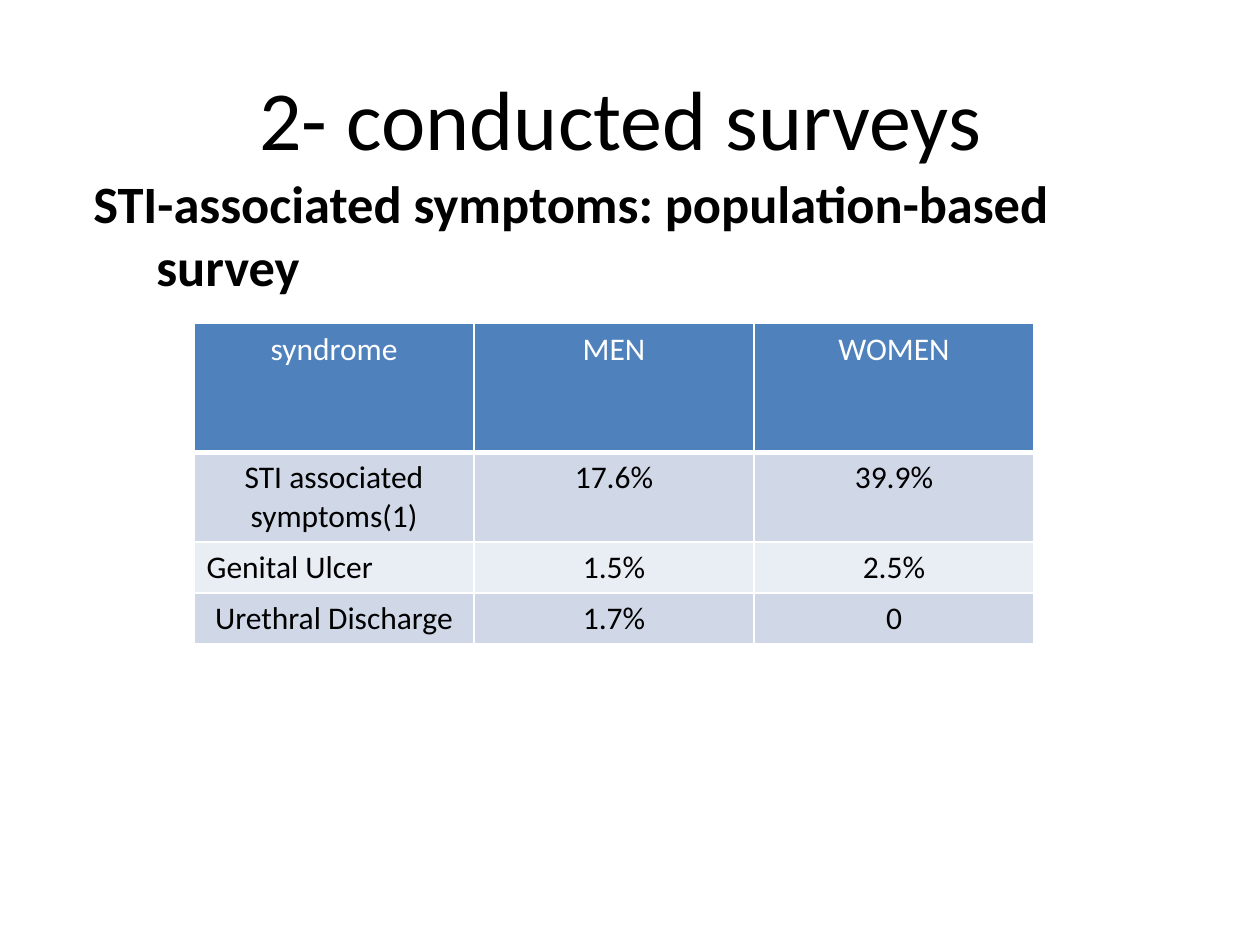
from lxml import etree
from pptx import Presentation
from pptx.dml.color import RGBColor
from pptx.enum import text
from pptx.oxml import ns
from pptx.util import Pt

COLORS = {
    "text": "000000",
    "white": "FFFFFF",
    "header": "4F81BD",
    "band_dark": "D0D8E8",
    "band_light": "E9EDF4",
}
CENTER, LEFT = text.PP_ALIGN.CENTER, text.PP_ALIGN.LEFT


def write(frame, words, size, color="text", bold=False, align=LEFT):
    """Fill a text frame with one formatted paragraph and return it."""
    para = frame.paragraphs[0]
    para.alignment = align
    span = para.add_run()
    span.text = words
    span.font.name = "Calibri"
    span.font.size = Pt(size)
    span.font.bold = bold
    span.font.color.rgb = RGBColor.from_string(COLORS[color])
    return para


def add_border(cell, side, width):
    line = etree.SubElement(cell._tc.get_or_add_tcPr(), ns.qn(f"a:ln{side}"), w=str(Pt(width)))
    fill = etree.SubElement(line, ns.qn("a:solidFill"))
    etree.SubElement(fill, ns.qn("a:srgbClr"), val=COLORS["white"])


deck = Presentation()
deck.slide_width, deck.slide_height = Pt(720), Pt(540)
page = deck.slides.add_slide(deck.slide_layouts[1])

# Title and subtitle
title = page.shapes.title
title.left, title.top, title.width, title.height = Pt(36), Pt(21.6), Pt(648), Pt(90)
title.text_frame.vertical_anchor = text.MSO_ANCHOR.MIDDLE
write(title.text_frame, "2- conducted surveys ", 48, align=CENTER)

body = page.placeholders[1]
body.left, body.top, body.width, body.height = Pt(42.5), Pt(94.3), Pt(640.8), Pt(380.2)
para = write(body.text_frame, "STI-associated symptoms: population-based survey", 30, bold=True)
para.space_before = Pt(6)
props = para._p.get_or_add_pPr()
props.set("marL", str(Pt(39.6)))
props.set("indent", str(Pt(-36)))
etree.SubElement(props, ns.qn("a:buNone"))

# Survey table
rows = [
    ("syndrome", "MEN", "WOMEN"),
    ("STI associated symptoms(1)", "17.6%", "39.9%"),
    ("Genital Ulcer", "1.5%", "2.5%"),
    ("Urethral Discharge", "1.7%", "0"),
]
row_fills = ["header", "band_dark", "band_light", "band_dark"]
row_heights = [73.6, 29.2, 29.2, 29.2]
table = page.shapes.add_table(
    len(rows), 3, Pt(110.9), Pt(185), Pt(480), Pt(sum(row_heights))
).table
for column in table.columns:
    column.width = Pt(160)

for r, values in enumerate(rows):
    table.rows[r].height = Pt(row_heights[r])
    for c, value in enumerate(values):
        cell = table.cell(r, c)
        write(
            cell.text_frame,
            value,
            18,
            color="white" if r == 0 else "text",
            align=LEFT if value == "Genital Ulcer" else CENTER,
        )
        for side in "LRTB":
            add_border(cell, side, 3 if (r, side) == (0, "B") else 1)
        cell.fill.solid()
        cell.fill.fore_color.rgb = RGBColor.from_string(COLORS[row_fills[r]])

deck.save("out.pptx")
